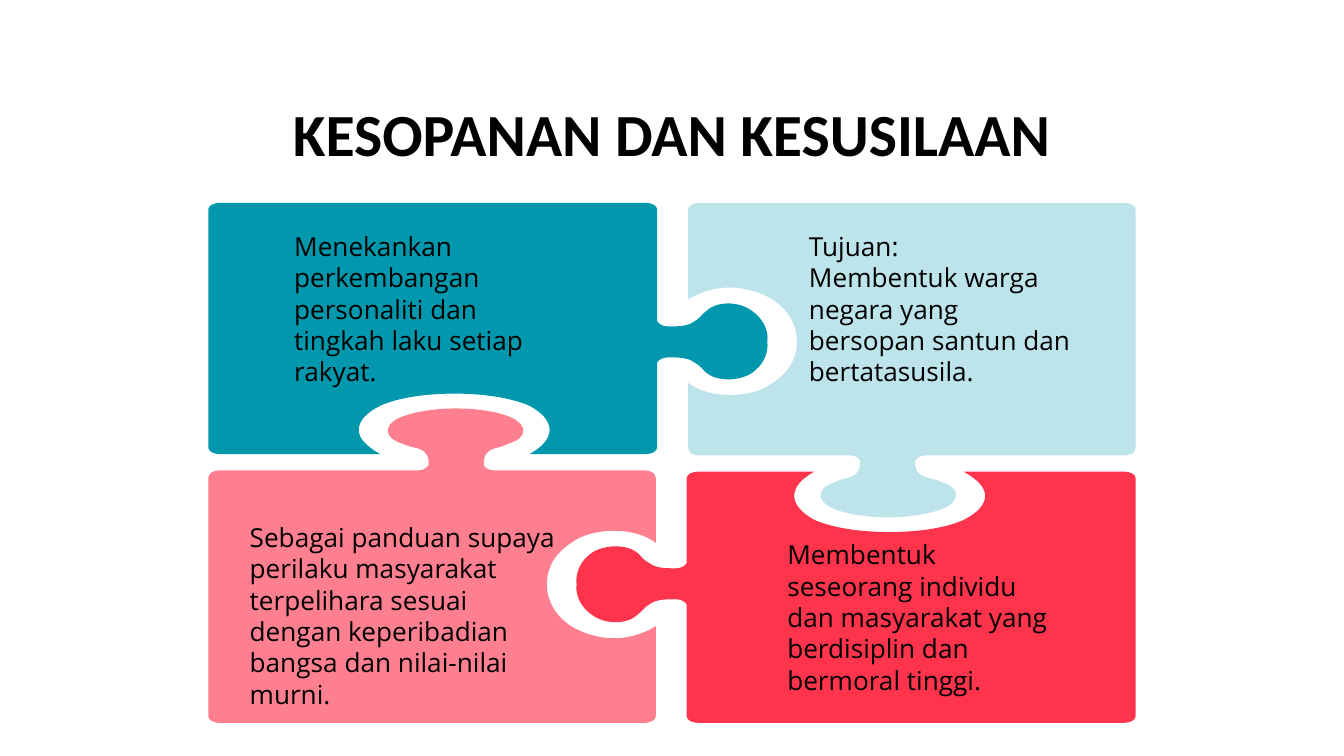
from lxml import etree
from pptx import Presentation
from pptx.dml.color import RGBColor
from pptx.enum.text import MSO_ANCHOR, PP_ALIGN
from pptx.oxml.ns import qn
from pptx.util import Cm, Pt

LEFT, CENTER = PP_ALIGN.LEFT, PP_ALIGN.CENTER
TOP = MSO_ANCHOR.TOP
BLANK_LAYOUT = 6
BLACK = "000000"
UNIT = Cm(0.0254)  # outline grid: a hundredth of an inch
TURN_X, TURN_Y = 1000, 689  # a half turn maps (x, y) to (TURN_X - x, TURN_Y - y)

# Outlines: a pair is a straight edge to that point, six numbers a Bezier curve.
TOP_LEFT = [
    (283, 338),
    (274, 333, 267, 327, 267, 320), (267, 313, 273, 307, 283, 302),
    (296, 296, 317, 293, 338, 293), (360, 293, 380, 296, 394, 302),
    (403, 307, 409, 313, 409, 320), (409, 327, 403, 333, 394, 338),
    (480, 338), (485, 338, 489, 336, 489, 333),
    (489, 270), (490, 268, 493, 266, 497, 266),
    (505, 266, 512, 266, 517, 270), (521, 272, 522, 274, 525, 277),
    (533, 284, 549, 284, 559, 278), (568, 272, 572, 263, 571, 254),
    (572, 246, 568, 237, 559, 231), (549, 224, 533, 224, 525, 232),
    (522, 234, 521, 237, 517, 239), (512, 243, 505, 243, 497, 243),
    (493, 243, 490, 241, 489, 239),
    (489, 156), (489, 153, 485, 151, 480, 151),
    (164, 151), (159, 151, 155, 153, 155, 156),
    (155, 333), (155, 336, 159, 338, 164, 338),
]
TOP_RIGHT = [
    (512, 223),
    (520, 218, 531, 214, 543, 214), (555, 214, 567, 218, 575, 223),
    (587, 231, 593, 242, 593, 254), (593, 267, 587, 277, 575, 285),
    (567, 291, 555, 294, 543, 294), (531, 294, 520, 291, 512, 285),
    (512, 333), (512, 337, 516, 339, 521, 339),
    (633, 339), (636, 339, 640, 341, 640, 343),
    (640, 348, 640, 352, 633, 355), (629, 356, 625, 357, 621, 359),
    (608, 363, 607, 372, 619, 378), (630, 383, 646, 385, 661, 385),
    (675, 385, 691, 383, 703, 378), (715, 372, 714, 363, 701, 359),
    (697, 357, 692, 356, 688, 355), (681, 352, 681, 348, 681, 343),
    (682, 341, 685, 339, 688, 339),
    (836, 339), (841, 339, 845, 337, 845, 333),
    (845, 156), (845, 153, 841, 151, 836, 151),
    (521, 151), (516, 151, 512, 153, 512, 156),
]


def color(hex_code):
    return RGBColor.from_string(hex_code)


def half_turn(outline):
    """Rotate an outline by 180 degrees about the middle of the puzzle."""
    return [tuple((TURN_Y if i % 2 else TURN_X) - value
                  for i, value in enumerate(step)) for step in outline]


def bend(shape, outline):
    """Make Bezier curves of the straight segments that stand for them."""
    left = min(step[-2] for step in outline)
    top = min(step[-1] for step in outline)
    segments = list(shape._element.iter(qn("a:lnTo")))
    for segment, step in zip(segments, outline[1:]):
        if len(step) == 2:
            continue
        curve = etree.Element(qn("a:cubicBezTo"))
        for x, y in zip(step[::2], step[1::2]):
            etree.SubElement(curve, qn("a:pt"), x=str(x - left), y=str(y - top))
        segment.getparent().replace(segment, curve)


class PuzzleSlide:
    title_font, body_font = "Calibri", "Open Sans"
    title_size, body_size = 32, 14
    inset = Pt(7.2)

    def __init__(self, slide):
        self.shapes = slide.shapes

    def piece(self, outline, fill):
        corners = [step[-2:] for step in outline]
        builder = self.shapes.build_freeform(*corners[0], scale=UNIT)
        builder.add_line_segments(corners[1:], close=True)
        shape = builder.convert_to_shape()
        bend(shape, outline)
        shape.shadow.inherit = False
        shape.fill.solid()
        shape.fill.fore_color.rgb = color(fill)
        shape.line.fill.background()

    def text(self, box, paragraphs, font, size, bold=False, align=LEFT):
        frame = self.shapes.add_textbox(*map(Cm, box)).text_frame
        frame.word_wrap = True
        frame.vertical_anchor = TOP
        frame.margin_left = frame.margin_right = self.inset
        frame.margin_top = frame.margin_bottom = self.inset
        for i, words in enumerate(paragraphs):
            paragraph = frame.add_paragraph() if i else frame.paragraphs[0]
            paragraph.alignment = align
            run = paragraph.add_run()
            run.text = words
            run.font.name = font
            run.font.size = Pt(size)
            run.font.bold = bold
            run.font.color.rgb = color(BLACK)

    def title(self, box, words):
        self.text(box, [words], self.title_font, self.title_size, True, CENTER)

    def body(self, box, *paragraphs):
        self.text(box, paragraphs, self.body_font, self.body_size)


def main():
    deck = Presentation()
    deck.slide_width, deck.slide_height = Cm(25.4), Cm(14.29)
    puzzle = PuzzleSlide(deck.slides.add_slide(deck.slide_layouts[BLANK_LAYOUT]))

    puzzle.piece(TOP_LEFT, "0198AD")
    puzzle.piece(TOP_RIGHT, "BDE4EA")
    puzzle.piece(half_turn(TOP_RIGHT), "FE7F8F")
    puzzle.piece(half_turn(TOP_LEFT), "FE344D")

    puzzle.title((3.02, 1.58, 19.36, 2.26), "KESOPANAN DAN KESUSILAAN")
    puzzle.body((5.31, 4.1, 5.54, 3.35),
                "Menekankan perkembangan personaliti dan tingkah laku setiap rakyat.")
    puzzle.body((4.47, 9.6, 6.4, 3.35),
                "Sebagai panduan supaya perilaku masyarakat terpelihara sesuai "
                "dengan keperibadian bangsa dan nilai-nilai murni.")
    puzzle.body((15.04, 4.1, 5.54, 3.35),
                "Tujuan:",
                "Membentuk warga negara yang bersopan santun dan bertatasusila.")
    puzzle.body((14.63, 9.93, 5.54, 3.35),
                "Membentuk seseorang individu dan masyarakat yang berdisiplin "
                "dan bermoral tinggi.")
    deck.save("out.pptx")


if __name__ == "__main__":
    main()
